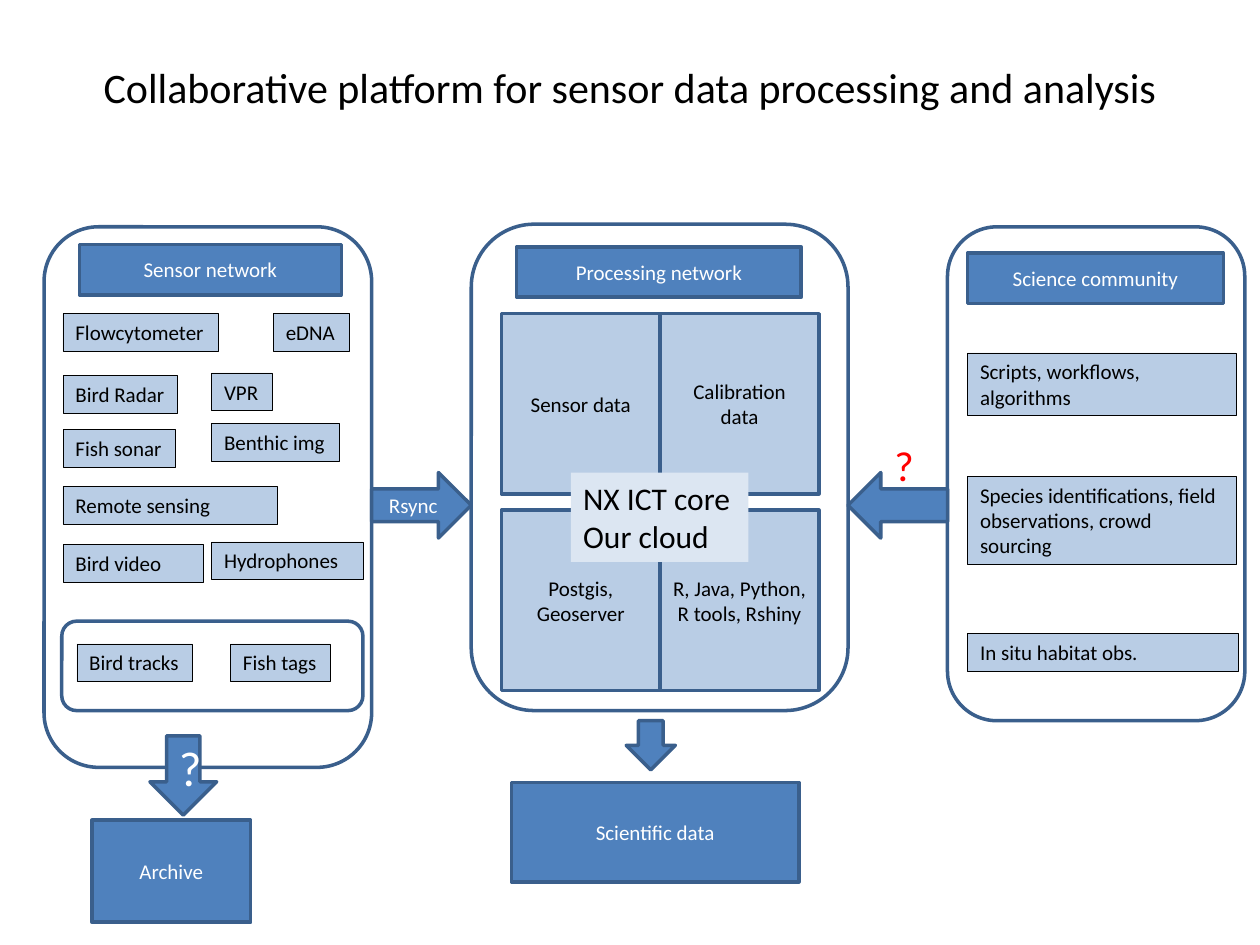
from pptx import Presentation
from pptx.dml.color import RGBColor
from pptx.enum.shapes import MSO_SHAPE
from pptx.enum.text import MSO_ANCHOR, MSO_AUTO_SIZE, PP_ALIGN
from pptx.util import Inches, Pt

BLACK = RGBColor(0x00, 0x00, 0x00)
WHITE = RGBColor(0xFF, 0xFF, 0xFF)
RED = RGBColor(0xFF, 0x00, 0x00)
BLUE = RGBColor(0x4F, 0x81, 0xBD)
NAVY = RGBColor(0x3A, 0x5F, 0x8C)
LIGHT = RGBColor(0xB9, 0xCD, 0xE5)
PALE = RGBColor(0xDC, 0xE6, 0xF2)

TITLE = "Collaborative platform for sensor data processing and analysis"

# Panels: left, top, width, height
SENSORS = (0.35, 1.8, 2.6, 4.29)
TRACKING = (0.49, 4.93, 2.39, 0.71)
SCIENCE = (7.52, 1.8, 2.36, 3.92)
PROCESSING = (3.74, 1.78, 2.99, 3.86)

# Dark blue boxes: text, position
BLOCKS = [
    ("Sensor network", (0.63, 1.94, 2.08, 0.4)),
    ("Processing network", (4.1, 1.96, 2.26, 0.4)),
    ("Science community", (7.68, 2.01, 2.03, 0.4)),
    ("Archive", (0.73, 6.51, 1.26, 0.81)),
    ("Scientific data", (4.06, 6.21, 2.28, 0.79)),
]

# Grid of processing cells, row by row
CELLS = [
    ["Sensor data", "Calibration data"],
    ["Postgis, Geoserver", "R, Java, Python, R tools, Rshiny"],
]
CELL_LEFT, CELL_TOP, CELL_W, CELL_H, ROW_GAP = 3.98, 2.49, 1.26, 1.43, 0.13

# Tags: text, left, top, width
TAG_H, LINE_H = 0.3, 0.2
COL_1, COL_2, COL_SCIENCE = 0.5, 1.68, 7.68
NARROW_TAGS = [
    ("Flowcytometer", COL_1, 2.49, 1.23),
    ("eDNA", 2.17, 2.49, 0.6),
    ("Bird Radar", COL_1, 2.98, 0.91),
    ("VPR", COL_2, 2.96, 0.48),
    ("Fish sonar", COL_1, 3.41, 0.89),
    ("Benthic img", COL_2, 3.36, 1.01),
    ("Bird tracks", 0.61, 5.11, 0.92),
    ("Fish tags", 1.83, 5.11, 0.79),
]
# Wrapping tags add their number of lines
WRAPPED_TAGS = [
    ("Remote sensing", COL_1, 3.86, 1.7, 1),
    ("Bird video", COL_1, 4.32, 1.11, 1),
    ("Hydrophones", COL_2, 4.3, 1.2, 1),
    ("Scripts, workflows, algorithms", COL_SCIENCE, 2.8, 2.13, 2),
    ("Species identifications, field observations, crowd sourcing",
     COL_SCIENCE, 3.78, 2.13, 3),
    ("In situ habitat obs.", COL_SCIENCE, 5.03, 2.15, 1),
]

# Arrows: shape, position, text, size, rotation
ARROW_Y, ARROW_W, ARROW_H = 3.75, 0.79, 0.52
ARROWS = [
    (MSO_SHAPE.DOWN_ARROW, (1.19, 5.84, 0.53, 0.63), "?", 28, 0),
    (MSO_SHAPE.DOWN_ARROW, (4.97, 5.72, 0.39, 0.39), "", 12, 0),
    (MSO_SHAPE.RIGHT_ARROW,
     (SENSORS[0] + SENSORS[2], ARROW_Y, ARROW_W, ARROW_H), "Rsync", 12, 0),
    (MSO_SHAPE.RIGHT_ARROW,
     (PROCESSING[0] + PROCESSING[2], ARROW_Y, ARROW_W, ARROW_H), "", 12, 180),
]


def write(sp, lines, size=12, color=BLACK, align=PP_ALIGN.CENTER,
          anchor=MSO_ANCHOR.MIDDLE, wrap=True, grow=False):
    tf = sp.text_frame
    tf.word_wrap = wrap
    tf.vertical_anchor = anchor
    if grow:
        tf.auto_size = MSO_AUTO_SIZE.SHAPE_TO_FIT_TEXT
    for i, line in enumerate(lines):
        p = tf.add_paragraph() if i else tf.paragraphs[0]
        p.alignment = align
        r = p.add_run()
        r.text = line
        r.font.name = "Calibri"
        r.font.size = Pt(size)
        r.font.color.rgb = color


def add_label(sp, lines, size=12, color=BLACK, wrap=False):
    """Write left-aligned text from the top, letting the shape fit it."""
    write(sp, lines, size, color, PP_ALIGN.LEFT, MSO_ANCHOR.TOP, wrap, True)


def add_box(s, kind, box, fill, line=NAVY, width=2):
    sp = s.shapes.add_shape(kind, *map(Inches, box))
    sp.shadow.inherit = False
    sp.fill.solid()
    sp.fill.fore_color.rgb = fill
    if line is None:
        sp.line.fill.background()
    else:
        sp.line.color.rgb = line
        sp.line.width = Pt(width)
    return sp


def add_tag(s, text, left, top, width, lines=1, wrap=False):
    box = (left, top, width, TAG_H + LINE_H * (lines - 1))
    sp = add_box(s, MSO_SHAPE.RECTANGLE, box, LIGHT, BLACK, 0.25)
    add_label(sp, [text], wrap=wrap)


def main():
    prs = Presentation()
    prs.slide_width, prs.slide_height = Inches(10), Inches(7.5)
    s = prs.slides.add_slide(prs.slide_layouts[6])

    for panel in (SENSORS, TRACKING, SCIENCE, PROCESSING):
        add_box(s, MSO_SHAPE.ROUNDED_RECTANGLE, panel, WHITE)

    title = s.shapes.add_textbox(*map(Inches, (0.5, 0.3, 9, 0.77)))
    write(title, [TITLE], 24)

    for text, box in BLOCKS:
        write(add_box(s, MSO_SHAPE.RECTANGLE, box, BLUE), [text], color=WHITE)

    for row, texts in enumerate(CELLS):
        for col, text in enumerate(texts):
            box = (CELL_LEFT + col * CELL_W,
                   CELL_TOP + row * (CELL_H + ROW_GAP), CELL_W, CELL_H)
            write(add_box(s, MSO_SHAPE.RECTANGLE, box, LIGHT), [text])

    for tag in NARROW_TAGS:
        add_tag(s, *tag)
    for tag in WRAPPED_TAGS:
        add_tag(s, *tag, wrap=True)

    for kind, box, text, size, rotation in ARROWS:
        sp = add_box(s, kind, box, BLUE)
        sp.rotation = rotation
        if text:
            write(sp, [text], size, WHITE)

    core = add_box(s, MSO_SHAPE.RECTANGLE, (4.53, 3.75, 1.41, 0.71), PALE, None)
    add_label(core, ["NX ICT core", "Our cloud"], 18)

    question = s.shapes.add_textbox(*map(Inches, (7, 3.44, 0.36, 0.5)))
    add_label(question, ["?"], 24, RED)

    prs.save("out.pptx")


if __name__ == "__main__":
    main()
